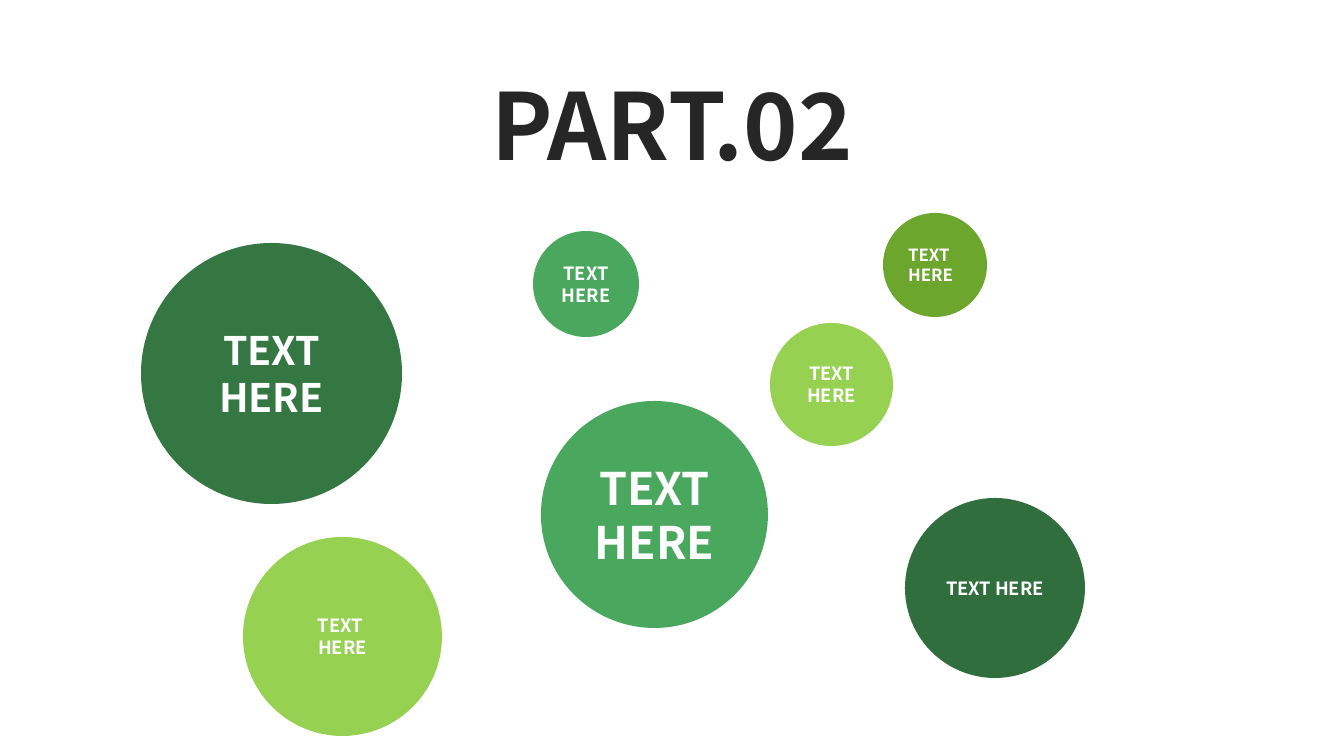
"""Build the PART.02 section slide with its scattered text circles."""
from dataclasses import dataclass

from pptx import Presentation
from pptx.dml.color import RGBColor
from pptx.enum.shapes import MSO_SHAPE
from pptx.enum.text import MSO_ANCHOR, MSO_AUTO_SIZE, PP_ALIGN
from pptx.util import Emu, Pt


@dataclass(frozen=True)
class Theme:
    font: str = "Noto Sans CJK JP"
    ink: str = "262626"
    white: str = "FFFFFF"
    forest: str = "357743"
    deep: str = "306E3D"
    green: str = "4AA85E"
    lime: str = "96D152"
    olive: str = "6CA62C"
    title: int = 66
    huge: int = 32
    large: int = 28
    small: int = 13
    tiny: int = 12


T = Theme()
TITLE = "PART.02"
TITLE_BOX = (441, 8, 462, 178)
LABEL = ["TEXT HERE"]
SPLIT_LABEL = ["TEXT ", "HERE"]
CIRCLES = [
    # left, top, diameter, fill, text size, paragraphs, alignment
    (141, 243, 261, T.forest, T.large, LABEL, PP_ALIGN.CENTER),
    (541, 401, 227, T.green, T.huge, LABEL, PP_ALIGN.CENTER),
    (533, 231, 106, T.green, T.small, LABEL, PP_ALIGN.CENTER),
    (243, 537, 199, T.lime, T.small, SPLIT_LABEL, PP_ALIGN.CENTER),
    (883, 213, 104, T.olive, T.tiny, LABEL, PP_ALIGN.LEFT),
    (905, 498, 180, T.deep, T.small, LABEL, PP_ALIGN.CENTER),
    (770, 323, 123, T.lime, T.small, LABEL, PP_ALIGN.CENTER),
]


def px(n):
    return Emu(round(n * 914400 / 100.8))


def write(tf, lines, size, color, align, anchor, spacing=None):
    tf.word_wrap = True
    tf.auto_size = MSO_AUTO_SIZE.NONE
    tf.vertical_anchor = anchor
    for i, line in enumerate(lines):
        p = tf.add_paragraph() if i else tf.paragraphs[0]
        p.alignment = align
        if spacing:
            p.line_spacing = spacing
        r = p.add_run()
        r.text = line
        r.font.name = T.font
        r.font.size = Pt(size)
        r.font.bold = True
        r.font.color.rgb = RGBColor.from_string(color)


def add_title(slide):
    sp = slide.shapes.title
    sp.left, sp.top, sp.width, sp.height = map(px, TITLE_BOX)
    write(sp.text_frame, [TITLE], T.title, T.ink, PP_ALIGN.CENTER, MSO_ANCHOR.TOP, 1.5)


def add_circle(slide, left, top, diameter, fill, size, lines, align):
    sp = slide.shapes.add_shape(MSO_SHAPE.OVAL, *map(px, (left, top, diameter, diameter)))
    sp.shadow.inherit = False
    sp.fill.solid()
    sp.fill.fore_color.rgb = RGBColor.from_string(fill)
    sp.line.fill.background()
    write(sp.text_frame, lines, size, T.white, align, MSO_ANCHOR.MIDDLE)


def main():
    prs = Presentation()
    prs.slide_width, prs.slide_height = px(1344), px(756)
    slide = prs.slides.add_slide(prs.slide_layouts[5])
    add_title(slide)
    for circle in CIRCLES:
        add_circle(slide, *circle)
    prs.save("out.pptx")


if __name__ == "__main__":
    main()
